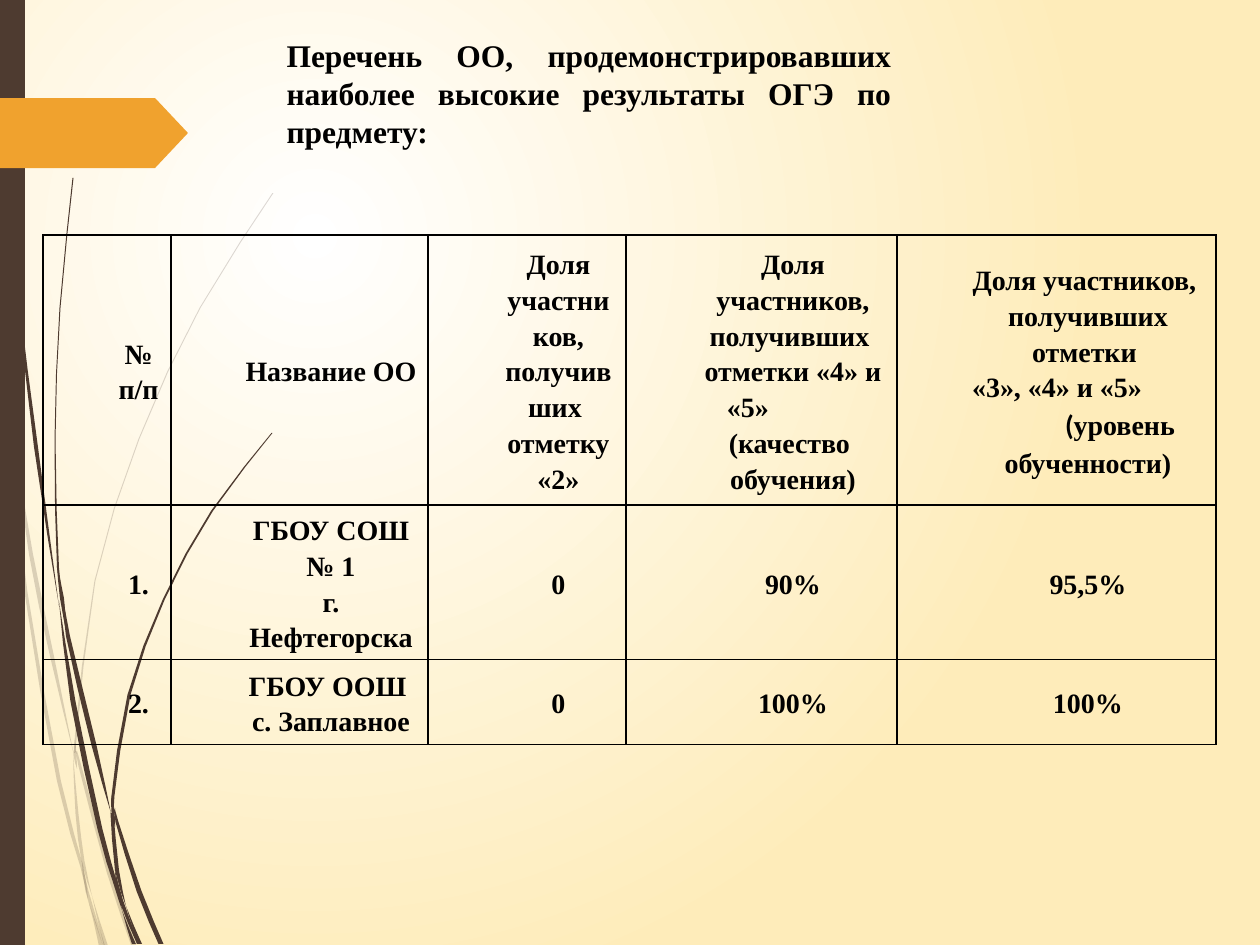
from lxml.etree import SubElement
from pptx import Presentation
from pptx.dml.color import RGBColor
from pptx.enum.shapes import MSO_SHAPE as SHAPE
from pptx.enum.text import MSO_ANCHOR as ANCHOR, MSO_AUTO_SIZE as AUTO, PP_ALIGN as ALIGN
from pptx.oxml.ns import qn
from pptx.util import Pt

PX = 914400 / 126
BROWN, ORANGE, BLACK, CREAM = "4E3B30", "F0A22E", "000000", "FEECBA"
FONT = "Times New Roman"

TITLE = "Перечень ОО, продемонстрировавших наиболее высокие результаты ОГЭ по предмету: "
# A cell is a list of paragraphs: text, or (text, shift of its centre in px, font of its first letter)
ROWS = [
    [["№ п/п"],
     ["Название ОО"],
     ["Доля участников, получивших ", "отметку «2»"],
     ["Доля участников, получивших ", "отметки «4» и", ("«5»", -45, FONT), "(качество ", "обучения)"],
     ["Доля участников, ", "получивших отметки ", ("«3», «4» и «5»", -31, FONT),
      ("(уровень", 32, "Calibri"), "обученности)"]],
    [["1."], ["ГБОУ СОШ № 1", "г. Нефтегорска"], ["0"], ["90%"], ["95,5%"]],
    [["2."], ["ГБОУ ООШ ", "с. Заплавное"], ["0"], ["100%"], ["100%"]],
]
COLUMN_WIDTHS = [128, 257, 198, 271, 319]
ROW_HEIGHTS = [106, 106, 85]
TABLE_LEFT, TABLE_TOP = 43, 235
CELL_INSET, CELL_INDENT = 9, 63

# Grass blades: (centre x, y, width) in px, from the tip to the foot
PALE_BLADES = [
    [(0, 366, 3), (5, 400, 2), (10, 441, 0)],
    [(13, 435, 0), (31, 554, 4), (52, 656, 4), (74, 755, 0)],
    [(77, 751, 0), (80, 766, 3), (109, 873, 4), (134, 946, 5)],
    [(92, 896, 0), (99, 922, 2), (106, 946, 4)],
    [(10, 441, 0), (26, 592, 3), (59, 781, 4), (82, 867, 3), (88, 900, 0)],
    [(73, 755, 0), (77, 814, 3), (83, 861, 3), (92, 896, 0)],
    [(273, 193, 1), (200, 308, 1), (139, 439, 1), (95, 581, 1), (76, 736, 2), (76, 751, 0)],
    [(88, 900, 0), (95, 923, 2), (101, 946, 4)],
    [(75, 738, 0), (75, 755, 3), (77, 769, 0)],
    [(82, 861, 0), (87, 891, 3), (104, 946, 2)],
]
DARK_BLADES = [
    [(3, 0, 1), (6, 138, 1), (18, 293, 1), (36, 447, 4), (59, 606, 0)],
    [(63, 595, 0), (68, 636, 4), (94, 745, 5), (111, 813, 0)],
    [(115, 808, 0), (117, 822, 3), (139, 891, 5), (161, 944, 5)],
    [(59, 601, 0), (73, 701, 5), (100, 829, 5), (115, 882, 4), (122, 910, 0)],
    [(73, 178, 1), (60, 308, 1), (55, 440, 1), (58, 568, 2), (63, 595, 0)],
    [(126, 906, 0), (133, 926, 2), (140, 944, 4)],
    [(57, 566, 0), (62, 598, 4), (67, 636, 0)],
    [(272, 433, 1), (212, 511, 2), (164, 599, 2), (129, 695, 3), (113, 796, 3), (115, 808, 0)],
    [(122, 910, 0), (128, 928, 2), (134, 944, 4)],
    [(112, 813, 3), (117, 870, 4), (126, 906, 0)],
    [(111, 795, 0), (113, 812, 3), (115, 827, 0)],
    [(115, 870, 0), (121, 900, 4), (138, 944, 2)],
]


def emu(px):
    return round(px * PX)


def rgb(color):
    return RGBColor.from_string(color)


def paint(sp, color):
    sp.shadow.inherit = False
    sp.fill.solid()
    sp.fill.fore_color.rgb = rgb(color)
    sp.line.fill.background()


def style(r, size, font=FONT):
    r.font.name, r.font.size, r.font.bold = font, Pt(size), True
    r.font.color.rgb = rgb(BLACK)


def smooth(points):
    """Add the Catmull-Rom midpoint between each two points."""
    padded = [points[0], *points, points[-1]]
    curve = []
    for a, b, c, d in zip(padded, padded[1:], padded[2:], padded[3:]):
        middle = [(9 * (q + s) - p - u) / 16 for p, q, s, u in zip(a, b, c, d)]
        curve += [b, middle]
    return curve + [points[-1]]


def add_blade(shapes, points, opacity=100):
    curve = smooth(points)
    left = [(emu(x - w / 2), emu(y)) for x, y, w in curve]
    right = [(emu(x + w / 2), emu(y)) for x, y, w in curve]
    builder = shapes.build_freeform(*left[0])
    builder.add_line_segments(left[1:] + right[::-1], close=True)
    sp = builder.convert_to_shape()
    paint(sp, BROWN)
    if opacity < 100:
        color = sp._element.spPr.find(qn("a:solidFill")).find(qn("a:srgbClr"))
        SubElement(color, qn("a:alpha"), val=str(opacity * 1000))


def set_background(slide):
    fill = slide.background.fill
    fill.gradient()
    for stop, color in zip(fill.gradient_stops, ("FFFFFF", CREAM)):
        stop.color.rgb = rgb(color)
    grad = slide._element.find(".//" + qn("a:gradFill"))
    grad.remove(grad.find(qn("a:lin")))
    circle = SubElement(grad, qn("a:path"), path="circle")
    SubElement(circle, qn("a:fillToRect"), l="50000", t="50000", r="100000", b="100000")


def add_borders(cell):
    tcPr = cell._tc.get_or_add_tcPr()
    for side in ("lnL", "lnR", "lnT", "lnB"):
        ln = SubElement(tcPr, qn("a:" + side), w=str(Pt(1)))
        SubElement(SubElement(ln, qn("a:solidFill")), qn("a:srgbClr"), val=BLACK)


def fill_cell(cell, paragraphs):
    add_borders(cell)
    cell.fill.background()
    cell.vertical_anchor = ANCHOR.MIDDLE
    cell.margin_left = cell.margin_right = emu(CELL_INSET)
    cell.margin_top = cell.margin_bottom = 0
    tf = cell.text_frame
    for i, item in enumerate(paragraphs):
        text, shift, lead_font = (item, 0, FONT) if isinstance(item, str) else item
        p = tf.add_paragraph() if i else tf.paragraphs[0]
        p.alignment, p.line_spacing = ALIGN.CENTER, 1.15
        pPr = p._p.get_or_add_pPr()
        pPr.set("marL", str(emu(CELL_INDENT + max(2 * shift, 0))))
        pPr.set("marR", str(emu(max(-2 * shift, 0))))
        pPr.set("indent", "0")
        parts = [(text, FONT)] if lead_font == FONT else [(text[0], lead_font), (text[1:], FONT)]
        for part, font in parts:
            r = p.add_run()
            r.text = part
            style(r, 16, font)


def main():
    prs = Presentation()
    prs.slide_width, prs.slide_height = emu(1260), emu(945)
    slide = prs.slides.add_slide(prs.slide_layouts[5])
    shapes = slide.shapes
    set_background(slide)

    for points in PALE_BLADES:
        add_blade(shapes, points, opacity=20)
    for points in DARK_BLADES:
        add_blade(shapes, points)

    bar = shapes.add_shape(SHAPE.RECTANGLE, 0, 0, emu(25), emu(945))
    paint(bar, BROWN)
    arrow = shapes.add_shape(SHAPE.PENTAGON, 0, emu(98), emu(188), emu(70))
    arrow.adjustments[0] = 0.47
    paint(arrow, ORANGE)

    title = shapes.title
    title.left, title.top, title.width, title.height = map(emu, (274, 30, 630, 127))
    tf = title.text_frame
    tf.text = TITLE
    tf.word_wrap, tf.auto_size, tf.vertical_anchor = True, AUTO.SHAPE_TO_FIT_TEXT, ANCHOR.TOP
    p = tf.paragraphs[0]
    p.alignment = ALIGN.JUSTIFY
    style(p.runs[0], 18)

    table = shapes.add_table(len(ROWS), len(COLUMN_WIDTHS), emu(TABLE_LEFT), emu(TABLE_TOP),
                             emu(sum(COLUMN_WIDTHS)), emu(sum(ROW_HEIGHTS))).table
    table.first_row = table.horz_banding = False
    for column, width in zip(table.columns, COLUMN_WIDTHS):
        column.width = emu(width)
    for row, height, contents in zip(table.rows, ROW_HEIGHTS, ROWS):
        row.height = emu(height)
        for cell, paragraphs in zip(row.cells, contents):
            fill_cell(cell, paragraphs)

    prs.save("out.pptx")


if __name__ == "__main__":
    main()
